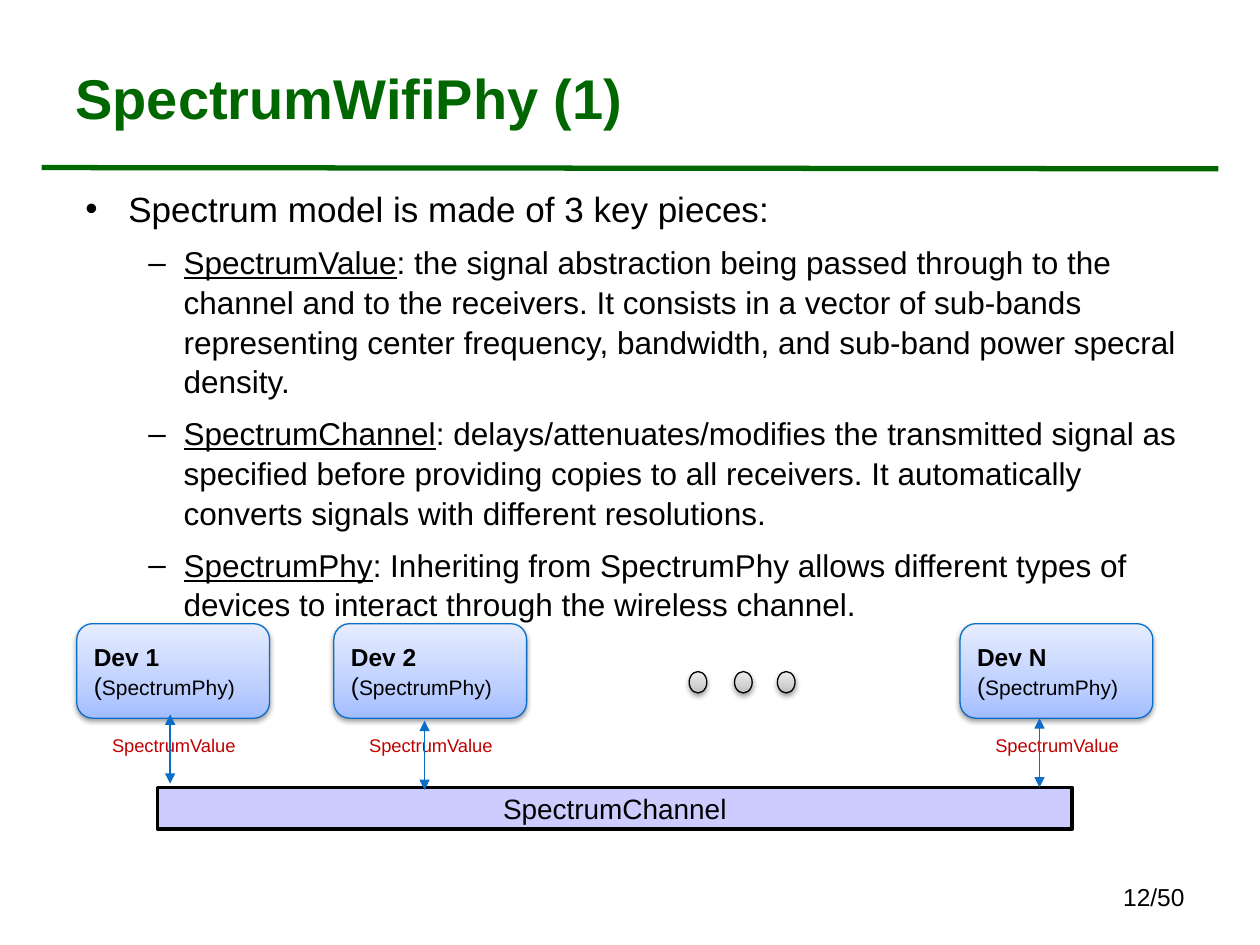
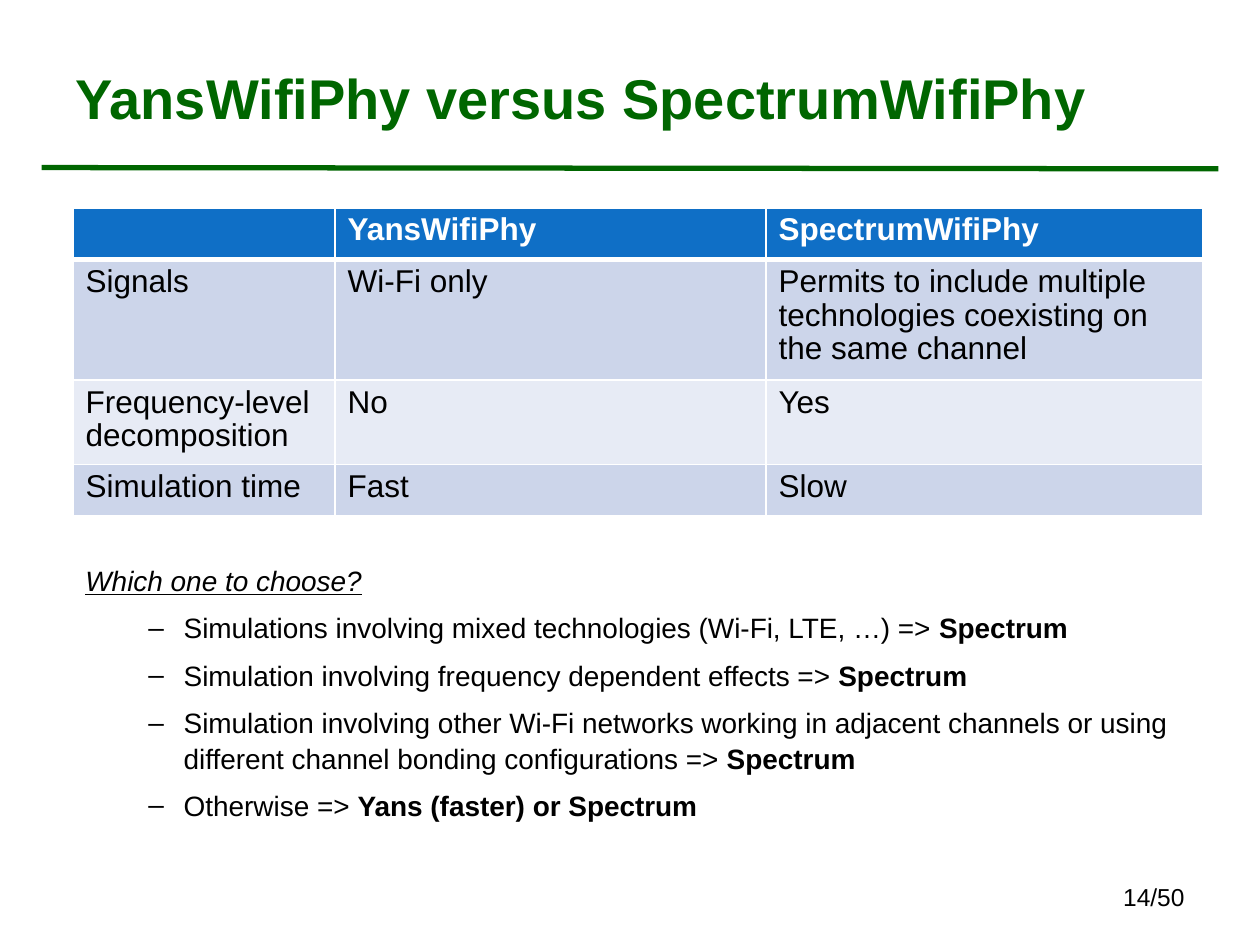
from copy import deepcopy
from dataclasses import dataclass

from lxml import etree
from pptx import Presentation
from pptx import util as u
from pptx.dml.color import RGBColor
from pptx.enum import shapes, text
from pptx.oxml import ns

PX = 9144  # EMU in one px, 100 px to the inch
FONT = "Arial"
BLACK = RGBColor(0x00, 0x00, 0x00)
WHITE = RGBColor(0xFF, 0xFF, 0xFF)
GREEN = RGBColor(0x00, 0x66, 0x00)
RED = RGBColor(0xC0, 0x00, 0x00)
BLUE = RGBColor(0x0A, 0x6D, 0xC6)
LILAC = RGBColor(0xCC, 0xCC, 0xFF)
HEADER_FILL = RGBColor(0x0F, 0x6F, 0xC6)
BAND_FILLS = (RGBColor(0xCC, 0xD5, 0xEA), RGBColor(0xE7, 0xEB, 0xF5))
BLUE_FADE = (RGBColor(0xA3, 0xBD, 0xFF), RGBColor(0xBE, 0xD0, 0xFF), RGBColor(0xE6, 0xED, 0xFF))
GRAY_FADE = (RGBColor(0xBD, 0xBD, 0xBD), RGBColor(0xD1, 0xD1, 0xD1), RGBColor(0xEE, 0xEE, 0xEE))
FADE_STOPS = (0, 0.35, 1)

CENTER = text.PP_ALIGN.CENTER
MIDDLE = text.MSO_ANCHOR.MIDDLE
RECT = shapes.MSO_SHAPE.RECTANGLE
ROUNDED = shapes.MSO_SHAPE.ROUNDED_RECTANGLE
OVAL = shapes.MSO_SHAPE.OVAL


@dataclass(frozen=True)
class Box:
    left: int
    top: int
    width: int
    height: int

    def emu(self) -> tuple[int, ...]:
        return tuple(n * PX for n in (self.left, self.top, self.width, self.height))


@dataclass(frozen=True)
class Run:
    text: str
    size: float
    color: RGBColor = BLACK
    bold: bool = False
    italic: bool = False
    underline: bool = False


@dataclass(frozen=True)
class Bullet:
    char: str
    margin: int
    hang: int


@dataclass(frozen=True)
class Para:
    runs: tuple[Run, ...]
    bullet: Bullet | None = None
    before: int = 0
    spacing: float | None = None
    align: text.PP_ALIGN | None = None


@dataclass(frozen=True)
class Device:
    name: str
    left: int
    arrow_x: int
    arrow_top: int


DOT = Bullet("•", 34, 34)
DASH = Bullet("–", 78, 28)
BODY_SPACING = 1.05
TABLE_SPACING = 0.95

PIECES = (
    ("SpectrumValue", ": the signal abstraction being passed through to the channel and to the "
     "receivers. It consists in a vector of sub-bands representing center frequency, bandwidth, "
     "and sub-band power specral density."),
    ("SpectrumChannel", ": delays/attenuates/modifies the transmitted signal as specified before "
     "providing copies to all receivers. It automatically converts signals with different "
     "resolutions."),
    ("SpectrumPhy", ": Inheriting from SpectrumPhy allows different types of devices to interact "
     "through the wireless channel."),
)
DEVICES = (
    Device("Dev 1", 61, 135, 567),
    Device("Dev 2", 265, 337, 572),
    Device("Dev N", 762, 825, 570),
)
ELLIPSIS_LEFTS = (547, 583, 617)
COMPARISON = (
    ("", "YansWifiPhy", "SpectrumWifiPhy"),
    ("Signals", "Wi-Fi only",
     "Permits to include multiple technologies coexisting on the same channel"),
    ("Frequency-level decomposition", "No", "Yes"),
    ("Simulation time", "Fast", "Slow"),
)
COLUMN_WIDTHS = (208, 342, 347)
ROW_HEIGHT = 41
CHOICES = (
    ("Simulations involving mixed technologies (Wi-Fi, LTE, …) => ", "Spectrum"),
    ("Simulation involving frequency dependent effects => ", "Spectrum"),
    ("Simulation involving other Wi-Fi networks working in adjacent channels or using different "
     "channel bonding configurations => ", "Spectrum"),
    ("Otherwise => ", "Yans (faster) or Spectrum"),
)


def add_xml(parent, tag: str, **attrs):
    return etree.SubElement(parent, ns.qn(tag), {k: str(v) for k, v in attrs.items()})


def add_color(parent, color: RGBColor):
    return add_xml(parent, "a:srgbClr", val=color)


def set_bullet(p, bullet: Bullet) -> None:
    pPr = p._p.get_or_add_pPr()
    pPr.set("marL", str(bullet.margin * PX))
    pPr.set("indent", str(-bullet.hang * PX))
    add_color(add_xml(pPr, "a:buClr"), BLACK)
    add_xml(pPr, "a:buFont", typeface=FONT)
    add_xml(pPr, "a:buChar", char=bullet.char)


def write(tf, *paras: Para) -> None:
    for i, para in enumerate(paras):
        p = tf.add_paragraph() if i else tf.paragraphs[0]
        if para.bullet:
            set_bullet(p, para.bullet)
        if para.before:
            p.space_before = u.Pt(para.before)
        if para.spacing:
            p.line_spacing = para.spacing
        if para.align:
            p.alignment = para.align
        for run in para.runs:
            r = p.add_run()
            r.text = run.text
            r.font.name, r.font.size = FONT, u.Pt(run.size)
            r.font.bold, r.font.italic, r.font.underline = run.bold, run.italic, run.underline
            r.font.color.rgb = run.color


def add_text(s, box: Box, *paras: Para, anchor=text.MSO_ANCHOR.TOP, wrap: bool = True) -> None:
    tf = s.shapes.add_textbox(*box.emu()).text_frame
    tf.word_wrap = wrap
    tf.vertical_anchor = anchor
    write(tf, *paras)


def add_box(s, kind, box: Box, line: RGBColor, weight: float):
    sp = s.shapes.add_shape(kind, *box.emu())
    sp.shadow.inherit = False
    sp.line.color.rgb = line
    sp.line.width = u.Pt(weight)
    sp.text_frame.vertical_anchor = MIDDLE
    return sp


def add_raised_box(s, kind, box: Box, line: RGBColor, fade: tuple[RGBColor, ...]):
    """Add a shape with an upward three-stop gradient and a soft shadow below."""
    sp = add_box(s, kind, box, line, 0.75)
    sp.fill.gradient()
    sp.fill.gradient_angle = 90
    stops = sp._element.spPr.xpath(".//a:gsLst")[0]
    stops.append(deepcopy(stops[0]))
    for stop, color, position in zip(sp.fill.gradient_stops, fade, FADE_STOPS):
        stop.color.rgb = color
        stop.position = position
    effects = sp._element.spPr.find(ns.qn("a:effectLst"))
    shadow = add_xml(effects, "a:outerShdw", blurRad=u.Pt(3.1), dist=u.Pt(1.6),
                     dir=5400000, rotWithShape=0)
    add_xml(add_color(shadow, BLACK), "a:alpha", val=38000)
    return sp


def add_line(s, start: tuple[int, int], end: tuple[int, int], color: RGBColor,
             weight: float, arrows: bool = False) -> None:
    points = (n * PX for n in (*start, *end))
    line = s.shapes.add_connector(shapes.MSO_CONNECTOR.STRAIGHT, *points)
    line.line.color.rgb = color
    line.line.width = u.Pt(weight)
    if arrows:
        for tag in ("a:headEnd", "a:tailEnd"):
            add_xml(line.line._get_or_add_ln(), tag, type="triangle")
    add_xml(line._element.spPr, "a:effectLst")


def add_slide(prs, title: str, page: int):
    s = prs.slides.add_slide(prs.slide_layouts[6])
    add_line(s, (33, 133), (967, 134), GREEN, 3)
    add_text(s, Box(50, 30, 897, 94), Para((Run(title, 32, GREEN, bold=True),)), anchor=MIDDLE)
    add_text(s, Box(717, 695, 233, 40),
             Para((Run(f"{page}/50", 14),), align=text.PP_ALIGN.RIGHT))
    return s


def add_device(s, device: Device) -> None:
    sp = add_raised_box(s, ROUNDED, Box(device.left, 495, 153, 75), BLUE, BLUE_FADE)
    left = text.PP_ALIGN.LEFT
    write(sp.text_frame,
          Para((Run(device.name, 14, bold=True),), align=left),
          Para((Run("(", 14), Run("SpectrumPhy)", 12)), align=left))
    add_text(s, Box(device.left + 10, 578, 134, 39),
             Para((Run("SpectrumValue", 10.5, RED),), align=CENTER), wrap=False)
    add_line(s, (device.arrow_x, device.arrow_top), (device.arrow_x, device.arrow_top + 55),
             BLUE, 0.75, arrows=True)


def set_borders(cell, top: int, bottom: int) -> None:
    tcPr = cell._tc.get_or_add_tcPr()
    for side, weight in (("L", 1), ("R", 1), ("T", top), ("B", bottom)):
        ln = add_xml(tcPr, f"a:ln{side}", w=u.Pt(weight))
        add_color(add_xml(ln, "a:solidFill"), WHITE)


def add_comparison(s) -> None:
    box = Box(58, 165, sum(COLUMN_WIDTHS), ROW_HEIGHT * len(COMPARISON))
    table = s.shapes.add_table(len(COMPARISON), len(COLUMN_WIDTHS), *box.emu()).table
    for column, width in zip(table.columns, COLUMN_WIDTHS):
        column.width = width * PX
    for i, row in enumerate(COMPARISON):
        header = i == 0
        for j, words in enumerate(row):
            cell = table.cell(i, j)
            set_borders(cell, top=3 if i == 1 else 1, bottom=3 if header else 1)
            cell.fill.solid()
            cell.fill.fore_color.rgb = HEADER_FILL if header else BAND_FILLS[(i - 1) % 2]
            if words:
                run = Run(words, 18, WHITE if header else BLACK, bold=header)
                write(cell.text_frame, Para((run,), spacing=TABLE_SPACING))


def build_model_slide(prs) -> None:
    s = add_slide(prs, "SpectrumWifiPhy (1)", 12)
    intro = Para((Run("Spectrum model is made of 3 key pieces:", 20),), DOT,
                 spacing=BODY_SPACING)
    pieces = (Para((Run(name, 18, underline=True), Run(role, 18)), DASH, 7, BODY_SPACING)
              for name, role in PIECES)
    add_text(s, Box(58, 142, 897, 533), intro, *pieces)

    channel = add_box(s, RECT, Box(125, 625, 726, 33), BLACK, 2)
    channel.fill.solid()
    channel.fill.fore_color.rgb = LILAC
    write(channel.text_frame, Para((Run("SpectrumChannel", 16),), align=CENTER))
    for device in DEVICES:
        add_device(s, device)
    for left in ELLIPSIS_LEFTS:
        add_raised_box(s, OVAL, Box(left, 533, 14, 17), BLACK, GRAY_FADE)


def build_comparison_slide(prs) -> None:
    s = add_slide(prs, "YansWifiPhy versus SpectrumWifiPhy", 14)
    add_comparison(s)
    question = Para((Run("Which one to choose?", 16, italic=True, underline=True),),
                    spacing=BODY_SPACING)
    choices = (Para((Run(case, 16), Run(answer, 16, bold=True)), DASH, 7, BODY_SPACING)
               for case, answer in CHOICES)
    add_text(s, Box(58, 441, 897, 234), question, *choices)


def main() -> None:
    prs = Presentation()
    prs.slide_width, prs.slide_height = 1000 * PX, 750 * PX
    build_model_slide(prs)
    build_comparison_slide(prs)
    prs.save("out.pptx")


if __name__ == "__main__":
    main()
